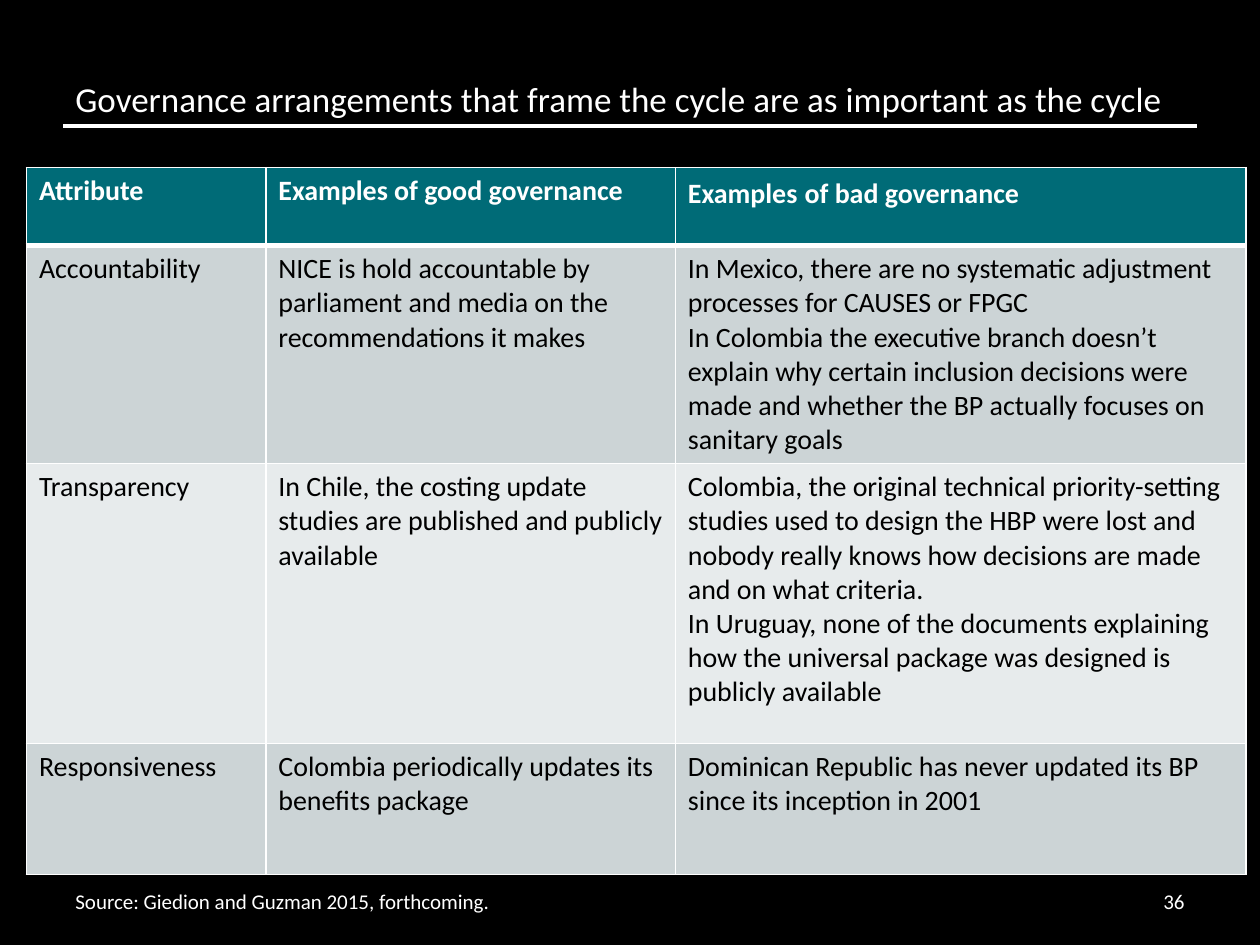
from lxml import etree
from pptx import Presentation
from pptx.dml.color import RGBColor
from pptx.enum.shapes import MSO_CONNECTOR
from pptx.enum.text import MSO_ANCHOR, PP_ALIGN
from pptx.oxml.ns import qn
from pptx.util import Inches, Pt

LINE = MSO_CONNECTOR.STRAIGHT
LOW, MID, TOP = MSO_ANCHOR.BOTTOM, MSO_ANCHOR.MIDDLE, MSO_ANCHOR.TOP
LEFT, RIGHT = PP_ALIGN.LEFT, PP_ALIGN.RIGHT
COLS, ROWS = 100, 75
UNIT = Inches(0.1)
FONT = "Calibri"
INK = {"back": "000000", "white": "FFFFFF", "head": "006B77",
       "odd": "CCD4D6", "even": "E7EBEC"}

HEAD = [
    [[("Attribute", 16)]],
    [[("Examples of good governance", 16)]],
    [[("Examples", 16), (" ", 18), ("of bad governance", 16)]],
]
BODY = [
    ["Accountability",
     "NICE is hold accountable by parliament and media on the "
     "recommendations it makes",
     "In Mexico, there are no systematic adjustment processes for "
     "CAUSES or FPGC\n"
     "In Colombia the executive branch doesn’t explain why certain "
     "inclusion decisions were made and whether the BP actually focuses "
     "on sanitary goals"],
    ["Transparency",
     "In Chile, the costing update studies are published and publicly "
     "available",
     "Colombia, the original technical priority-setting studies used to "
     "design the HBP were lost and nobody really knows how decisions are "
     "made and on what criteria.\n"
     "In Uruguay, none of the documents explaining how the universal "
     "package was designed is publicly available"],
    ["Responsiveness",
     "Colombia periodically updates its benefits package",
     "Dominican Republic has never updated its BP since its inception "
     "in 2001"],
]


def tint(name):
    """Return the named colour."""
    return RGBColor.from_string(INK[name])


def span(*parts):
    """Turn grid units into slide lengths."""
    return [round(part * UNIT) for part in parts]


def write(frame, paras, ink, bold=False, align=LEFT):
    """Fill a text frame with paragraphs of (text, size) runs."""
    for num, runs in enumerate(paras):
        para = frame.add_paragraph() if num else frame.paragraphs[0]
        para.alignment = align
        for text, size in runs:
            run = para.add_run()
            run.text = text
            font = run.font
            font.name, font.size, font.bold = FONT, Pt(size), bold
            font.color.rgb = tint(ink)


def label(slide, box, text, size, anchor, align=LEFT):
    """Place one line of white text in a box."""
    frame = slide.shapes.add_textbox(*span(*box)).text_frame
    frame.word_wrap = True
    frame.vertical_anchor = anchor
    write(frame, [[(text, size)]], "white", align=align)


def title(slide, box, text):
    """Place the heading with a rule along its foot."""
    x, y, w, h = box
    rule = slide.shapes.add_connector(LINE, *span(x, y + h, x + w, y + h))
    rule.line.color.rgb = tint("white")
    rule.line.width = Pt(2.25)
    etree.SubElement(rule._element.spPr, qn("a:effectLst"))
    label(slide, box, text, 20, LOW)


def edge(cell, sides):
    """Draw white borders of the given point widths on a cell."""
    props = cell._tc.get_or_add_tcPr()
    for side, width in sides.items():
        line = etree.SubElement(props, qn("a:ln" + side), w=str(Pt(width)))
        fill = etree.SubElement(line, qn("a:solidFill"))
        etree.SubElement(fill, qn("a:srgbClr"), val=INK["white"])


def table(slide, box, wide, high):
    """Place the governance table with its banded rows."""
    body = [[[[(line, 16)] for line in text.split("\n")] for text in row]
            for row in BODY]
    data = [HEAD] + body
    grid = slide.shapes.add_table(len(high), len(wide), *span(*box)).table
    for col, size in zip(grid.columns, span(*wide)):
        col.width = size
    for row, size in zip(grid.rows, span(*high)):
        row.height = size
    for r, row in enumerate(data):
        band = "head" if r == 0 else "odd" if r % 2 else "even"
        sides = {"L": 1, "R": 1, "T": 3 if r == 1 else 1,
                 "B": 3 if r == 0 else 1}
        for c, paras in enumerate(row):
            cell = grid.cell(r, c)
            edge(cell, sides)
            cell.fill.solid()
            cell.fill.fore_color.rgb = tint(band)
            cell.vertical_anchor = TOP
            write(cell.text_frame, paras, "back" if r else "white", r == 0)


def foot(slide, box, source, page):
    """Place the source at the left and the page number at the right."""
    x, y, w, h = box
    side = 5.7
    label(slide, (x, y, 71, h), source, 12, MID)
    label(slide, (x + w - side, y, side, h), page, 12, MID, RIGHT)


def main():
    """Build and save the slide."""
    deck = Presentation()
    deck.slide_width, deck.slide_height = span(COLS, ROWS)
    slide = deck.slides.add_slide(deck.slide_layouts[6])
    slide.background.fill.solid()
    slide.background.fill.fore_color.rgb = tint("back")
    title(slide, (5, 3, 90, 7),
          "Governance arrangements that frame the cycle are as important "
          "as the cycle")
    table(slide, (2.1, 13.3, 96.8, 56.1),
          (19, 32.5, 45.3), (6.2, 17.3, 22.2, 10.4))
    foot(slide, (5, 69.5, 90, 4),
         "Source: Giedion and Guzman 2015, forthcoming.", "36")
    deck.save("out.pptx")


if __name__ == "__main__":
    main()
